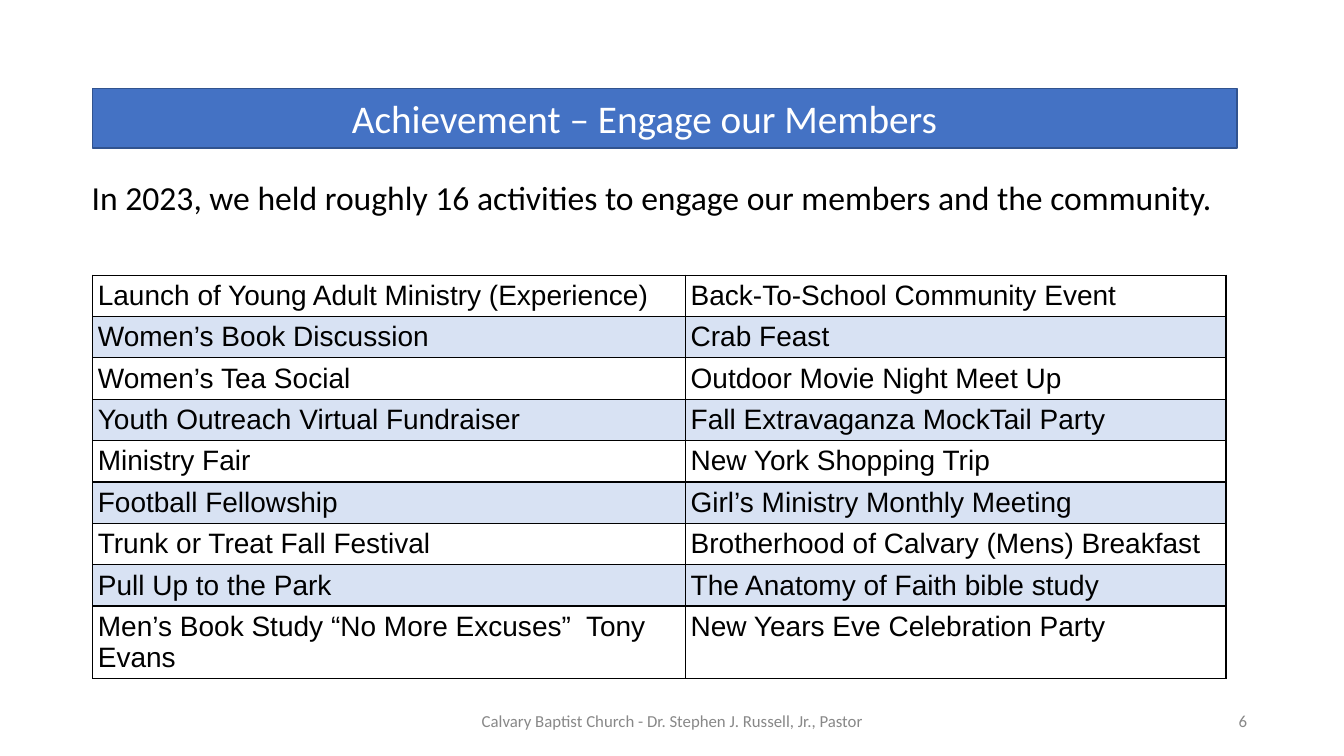
from dataclasses import dataclass

from lxml.etree import SubElement
from pptx import Presentation
from pptx.dml.color import RGBColor
from pptx.enum.shapes import MSO_SHAPE as Shape
from pptx.enum.text import MSO_ANCHOR as Anchor, MSO_AUTO_SIZE as AutoSize, PP_ALIGN as Align
from pptx.oxml.ns import qn
from pptx.slide import Slide
from pptx.table import _Cell as Cell
from pptx.text.text import TextFrame
from pptx.util import Emu, Pt

EMU_PER_PX = 9144
INSET = 5
COLORS = {
    "text": "000000",
    "title": "FFFFFF",
    "footer": "888888",
    "bar": "4472C4",
    "bar_line": "31538F",
    "plain_row": "FFFFFF",
    "band_row": "D8E2F3",
    "border": "000000",
}


def px(length: int) -> Emu:
    return Emu(length * EMU_PER_PX)


def color(name: str) -> RGBColor:
    return RGBColor.from_string(COLORS[name])


@dataclass(frozen=True)
class Box:
    left: int
    top: int
    width: int
    height: int

    def lengths(self) -> tuple[Emu, ...]:
        return tuple(px(n) for n in (self.left, self.top, self.width, self.height))


@dataclass(frozen=True)
class Style:
    size: int
    color: str
    font: str = "Calibri"
    align: Align = Align.LEFT
    anchor: Anchor = Anchor.MIDDLE
    wrap: bool = True


@dataclass(frozen=True)
class Label:
    text: str
    box: Box
    style: Style


BAR = Box(92, 88, 1135, 59)
TITLE = Label("Achievement – Engage our Members", Box(344, 81, 754, 78), Style(28, "title"))
LABELS = [
    Label("Calvary Baptist Church - Dr. Stephen J. Russell, Jr., Pastor",
          Box(447, 702, 440, 27), Style(12, "footer", align=Align.CENTER)),
    Label("6", Box(1222, 702, 20, 27), Style(12, "footer", align=Align.RIGHT, wrap=False)),
    Label("In 2023, we held roughly 16 activities to engage our members and the community.",
          Box(86, 171, 1125, 83), Style(24, "text", anchor=Anchor.TOP)),
]

TABLE = Box(92, 273, 1124, 369)
COLUMN_WIDTHS = (588, 536)
ROW_HEIGHT = 41
CELL_STYLE = Style(20, "text", font="Arial", anchor=Anchor.TOP)
ACTIVITIES = [
    ("Launch of Young Adult Ministry (Experience)", "Back-To-School Community Event"),
    ("Women’s Book Discussion", "Crab Feast"),
    ("Women’s Tea Social", "Outdoor Movie Night Meet Up"),
    ("Youth Outreach Virtual Fundraiser", "Fall Extravaganza MockTail Party"),
    ("Ministry Fair", "New York Shopping Trip"),
    ("Football Fellowship", "Girl’s Ministry Monthly Meeting"),
    ("Trunk or Treat Fall Festival", "Brotherhood of Calvary (Mens) Breakfast"),
    ("Pull Up to the Park", "The Anatomy of Faith bible study"),
    ("Men’s Book Study “No More Excuses”  Tony Evans", "New Years Eve Celebration Party"),
]


def set_margins(holder: TextFrame | Cell) -> None:
    holder.margin_left = holder.margin_right = px(INSET)
    holder.margin_top = holder.margin_bottom = px(INSET)


def write(frame: TextFrame, text: str, style: Style) -> None:
    frame.text = text
    para = frame.paragraphs[0]
    para.alignment = style.align
    span = para.runs[0]
    span.font.name = style.font
    span.font.size = Pt(style.size)
    span.font.color.rgb = color(style.color)


def fill_frame(frame: TextFrame, label: Label) -> None:
    write(frame, label.text, label.style)
    set_margins(frame)
    frame.auto_size = AutoSize.NONE
    frame.word_wrap = label.style.wrap
    frame.vertical_anchor = label.style.anchor


def add_bar(page: Slide) -> None:
    bar = page.shapes.add_shape(Shape.RECTANGLE, *BAR.lengths())
    bar.shadow.inherit = False
    bar.fill.solid()
    bar.fill.fore_color.rgb = color("bar")
    bar.line.color.rgb = color("bar_line")
    bar.line.width = Pt(1)
    # The title placeholder comes first on the page; lift it above the bar.
    bar._element.addnext(page.shapes.title._element)


def set_title(page: Slide) -> None:
    title = page.shapes.title
    title.left, title.top, title.width, title.height = TITLE.box.lengths()
    fill_frame(title.text_frame, TITLE)
    title.text_frame.paragraphs[0].line_spacing = 0.9


def add_borders(cell: Cell) -> None:
    properties = cell._tc.get_or_add_tcPr()
    for side in ("a:lnL", "a:lnR", "a:lnT", "a:lnB"):
        line = SubElement(properties, qn(side), w=str(Pt(1)))
        fill = SubElement(line, qn("a:solidFill"))
        SubElement(fill, qn("a:srgbClr"), val=COLORS["border"])


def add_activities(page: Slide) -> None:
    table = page.shapes.add_table(len(ACTIVITIES), len(COLUMN_WIDTHS), *TABLE.lengths()).table
    table.first_row = table.horz_banding = False
    for column, width in zip(table.columns, COLUMN_WIDTHS):
        column.width = px(width)
    for index, activities in enumerate(ACTIVITIES):
        table.rows[index].height = px(ROW_HEIGHT)
        for cell, activity in zip(table.rows[index].cells, activities):
            write(cell.text_frame, activity, CELL_STYLE)
            set_margins(cell)
            cell.vertical_anchor = CELL_STYLE.anchor
            add_borders(cell)
            cell.fill.solid()
            cell.fill.fore_color.rgb = color("band_row" if index % 2 else "plain_row")


def main() -> None:
    deck = Presentation()
    deck.slide_width, deck.slide_height = px(1333), px(750)
    page = deck.slides.add_slide(deck.slide_layouts.get_by_name("Title Only"))
    add_bar(page)
    set_title(page)
    for label in LABELS:
        fill_frame(page.shapes.add_textbox(*label.box.lengths()).text_frame, label)
    add_activities(page)
    deck.save("out.pptx")


if __name__ == "__main__":
    main()
